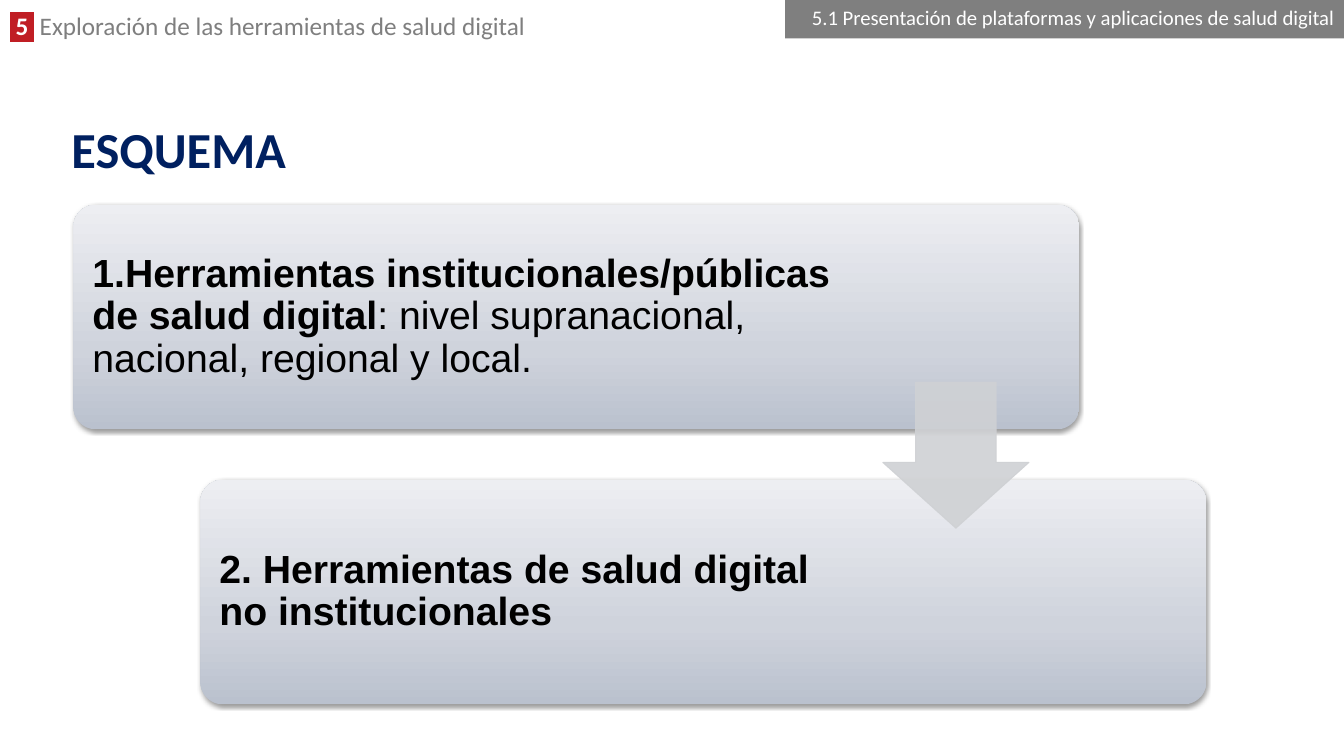
import pptx
import pptx.dml.color
import pptx.enum.shapes
import pptx.enum.text
import pptx.oxml
import pptx.oxml.ns
import pptx.util

Cm = pptx.util.Cm
Pt = pptx.util.Pt
Shapes = pptx.enum.shapes.MSO_SHAPE
Align = pptx.enum.text.PP_ALIGN
Anchor = pptx.enum.text.MSO_ANCHOR
AutoSize = pptx.enum.text.MSO_AUTO_SIZE
qn = pptx.oxml.ns.qn
NAMESPACE = pptx.oxml.ns.nsdecls("a")

COLOURS = {
    "white": "FFFFFF", "black": "000000", "grey": "7F7F7F",
    "red": "C01E24", "navy": "002060", "arrow": "CFD1D4",
    "dark": "BAC1CE", "middle": "CFD3DC", "light": "EDEEF2",
}
GRADIENT = [("dark", 0), ("middle", 35), ("light", 100)]
HEADER = {"name": "Calibri", "size": Pt(18), "bold": False}
SECTION = {"name": "Calibri", "size": Pt(14.8), "bold": False}
TITLE = {"name": "Calibri", "size": Pt(36), "bold": True}
STRONG = {"name": "Arial", "size": Pt(28), "bold": True}
PLAIN = {**STRONG, "bold": False}
CARD_LEFT, CARD_TOP = 1.85, 5.16
CARD_WIDTH, CARD_HEIGHT = 25.35, 5.66
STEP_RIGHT, STEP_DOWN = 3.2, 6.93
CARD_INSET = 0.18


def rgb(colour):
    return pptx.dml.color.RGBColor.from_string(COLOURS[colour])


def set_values(target, values):
    for name, value in values.items():
        setattr(target, name, value)


def lengths(*centimetres):
    return [Cm(value) for value in centimetres]


def set_frame(frame, inset_x, inset_y, anchor=Anchor.TOP):
    set_values(frame, {
        "word_wrap": True, "vertical_anchor": anchor,
        "margin_left": Cm(inset_x), "margin_right": Cm(inset_x),
        "margin_top": Cm(inset_y), "margin_bottom": Cm(inset_y),
    })


def write(frame, spans, spacing, align=Align.LEFT):
    para = frame.paragraphs[0]
    set_values(para, {"line_spacing": spacing, "alignment": align})
    for text, style, colour in spans:
        span = para.add_run()
        span.text = text
        set_values(span.font, style)
        span.font.color.rgb = rgb(colour)
    return para


def highlight(span, colour):
    mark = pptx.oxml.parse_xml(
        f'<a:highlight {NAMESPACE}><a:srgbClr val="{COLOURS[colour]}"/></a:highlight>')
    span.font._element.find(qn("a:solidFill")).addnext(mark)


def add_block(page, kind, box, colour):
    block = page.shapes.add_shape(kind, *lengths(*box))
    block.shadow.inherit = False
    block.fill.solid()
    block.fill.fore_color.rgb = rgb(colour)
    block.line.fill.background()
    return block


def add_text(page, box, spans, spacing, inset_x, inset_y, anchor=Anchor.TOP):
    label = page.shapes.add_textbox(*lengths(*box))
    set_frame(label.text_frame, inset_x, inset_y, anchor)
    return label, write(label.text_frame, spans, spacing)


def shade(card):
    stops = "".join(
        f'<a:gs pos="{place * 1000}"><a:srgbClr val="{COLOURS[colour]}"/></a:gs>'
        for colour, place in GRADIENT)
    gradient = pptx.oxml.parse_xml(
        f'<a:gradFill {NAMESPACE} rotWithShape="1"><a:gsLst>{stops}</a:gsLst>'
        '<a:lin ang="16200000" scaled="0"/></a:gradFill>')
    shadow = pptx.oxml.parse_xml(
        f'<a:outerShdw {NAMESPACE} blurRad="{Pt(3.1)}" dist="{Pt(1.6)}" dir="5400000" '
        f'rotWithShape="0"><a:srgbClr val="{COLOURS["black"]}">'
        '<a:alpha val="38000"/></a:srgbClr></a:outerShdw>')
    properties = card._element.spPr
    properties.replace(properties.find(qn("a:solidFill")), gradient)
    properties.find(qn("a:effectLst")).append(shadow)


def add_card(page, index, text_width, spans):
    left = CARD_LEFT + index * STEP_RIGHT
    top = CARD_TOP + index * STEP_DOWN
    card = add_block(page, Shapes.ROUNDED_RECTANGLE,
                     (left, top, CARD_WIDTH, CARD_HEIGHT), "light")
    card.adjustments[0] = 0.1
    shade(card)
    text_box = (left + CARD_INSET, top + CARD_INSET,
                text_width, CARD_HEIGHT - 2 * CARD_INSET)
    add_text(page, text_box, spans, 0.9, 0.3, 0.3, Anchor.MIDDLE)


def add_arrow(page):
    arrow = add_block(page, Shapes.DOWN_ARROW, (22.25, 9.63, 3.68, 3.68), "arrow")
    arrow.adjustments[0] = 0.55
    arrow.adjustments[1] = 0.45
    arrow.line.color.rgb = rgb("arrow")
    arrow.line.width = Pt(0.75)
    for colour in arrow._element.spPr.iter(qn("a:srgbClr")):
        colour.append(pptx.oxml.parse_xml(f'<a:alpha {NAMESPACE} val="90000"/>'))


def add_header(page):
    label, para = add_text(page, (0, 0.28, 14.5, 0.86), [
        (" 5 ", {**HEADER, "bold": True}, "white"),
        (" Exploración de las herramientas de salud digital", HEADER, "grey"),
    ], 0.8, 0.25, 0.13)
    label.text_frame.auto_size = AutoSize.SHAPE_TO_FIT_TEXT
    highlight(para.runs[0], "red")
    section = add_block(page, Shapes.RECTANGLE, (19.79, 0, 14.08, 0.97), "grey")
    set_frame(section.text_frame, 0.25, 0.13, Anchor.MIDDLE)
    write(section.text_frame, [
        ("5.1 Presentación de plataformas y aplicaciones de salud digital", SECTION, "white"),
    ], 0.8, Align.RIGHT)


def set_title(page, text):
    title = page.shapes.title
    set_values(title, dict(zip(("left", "top", "width", "height"),
                               lengths(1.55, 3, 30.73, 1.68))))
    set_frame(title.text_frame, 0.25, 0.13, Anchor.MIDDLE)
    write(title.text_frame, [(text, TITLE, "navy")], 0.9)


def main():
    deck = pptx.Presentation()
    deck.slide_width, deck.slide_height = lengths(33.87, 19.05)
    page = deck.slides.add_slide(deck.slide_layouts[5])
    add_header(page)
    set_title(page, "ESQUEMA")
    add_card(page, 0, 19.48, [
        ("1.Herramientas institucionales/públicas de salud digital", STRONG, "black"),
        (": nivel supranacional, nacional, regional y local.", PLAIN, "black"),
    ])
    add_card(page, 1, 16.87, [
        ("2. Herramientas de salud digital no institucionales", STRONG, "black"),
    ])
    add_arrow(page)
    deck.save("out.pptx")


if __name__ == "__main__":
    main()
